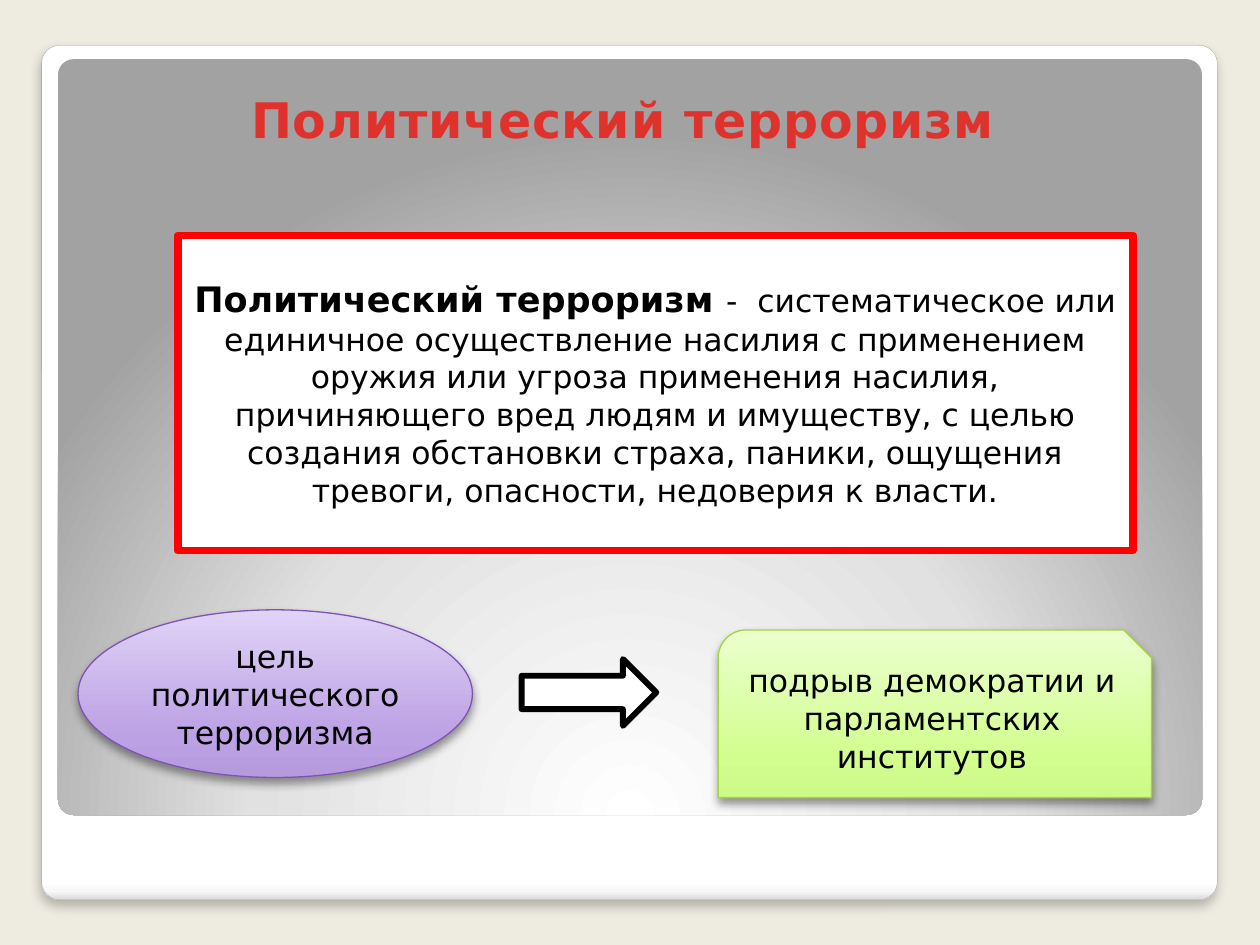
from lxml.etree import SubElement
from pptx import Presentation
from pptx.dml.color import RGBColor
from pptx.enum.shapes import MSO_SHAPE as Shape
from pptx.enum.text import MSO_ANCHOR as Anchor, MSO_AUTO_SIZE as AutoSize, PP_ALIGN as Align
from pptx.oxml.ns import qn
from pptx.util import Pt

FONT = "DejaVu Sans"
COLORS = {
    "background": "EEECE1", "white": "FFFFFF", "black": "000000",
    "title": "E0322D", "border": "FF0000", "frame": "A4A4A4",
    "purple": "7E54B2", "green": "A4D340",
}
GRADIENTS = {
    "frame": [(0, "FFFFFF"), (98, "FFFFFF"), (99, "F7F7F7"), (100, "DADADA")],
    "panel": [(0, "FFFFFF"), (55, "E1E1E1"), (100, "A2A2A2")],
    "purple": [(0, "B59ADE"), (25, "BCA1E4"), (100, "E0D3F6")],
    "green": [(0, "CDF989"), (25, "D2FE90"), (100, "EBFFCE")],
}
SOFT_SHADOW = {"opacity": 40, "blur": 5.2, "distance": 3}


def color(name):
    return RGBColor.from_string(COLORS[name])


def add_element(parent, tag, **attributes):
    values = {key: str(value) for key, value in attributes.items()}
    return SubElement(parent, qn(tag), values)


def set_gradient(shape, stops, angle=None):
    """Fill with a linear gradient, or a circular one from the bottom if no angle is given."""
    shape.fill.gradient()
    gradient = shape._element.spPr.find(qn("a:gradFill"))
    for child in list(gradient):
        gradient.remove(child)
    stop_list = add_element(gradient, "a:gsLst")
    for position, value in stops:
        stop = add_element(stop_list, "a:gs", pos=position * 1000)
        add_element(stop, "a:srgbClr", val=value)
    if angle is None:
        circle = add_element(gradient, "a:path", path="circle")
        add_element(circle, "a:fillToRect", l=50000, t=175000, r=50000, b=-75000)
    else:
        add_element(gradient, "a:lin", ang=angle * 60000, scaled=0)


def set_shadow(shape, opacity, blur, distance):
    effects = shape._element.spPr.find(qn("a:effectLst"))
    shadow = add_element(effects, "a:outerShdw", blurRad=Pt(blur), dist=Pt(distance),
                         dir=90 * 60000, algn="t", rotWithShape=0)
    tint = add_element(shadow, "a:srgbClr", val=COLORS["black"])
    add_element(tint, "a:alpha", val=opacity * 1000)


def add_figure(page, kind, bounds, gradient=None, angle=None, line=None, width=0.75,
               shadow=None, corner=None):
    shape = page.shapes.add_shape(kind, *map(Pt, bounds))
    shape.shadow.inherit = False
    if corner is not None:
        shape.adjustments[0] = corner
    if gradient:
        set_gradient(shape, GRADIENTS[gradient], angle)
    else:
        shape.fill.solid()
        shape.fill.fore_color.rgb = color("white")
    if line:
        shape.line.color.rgb = color(line)
        shape.line.width = Pt(width)
    else:
        shape.line.fill.background()
    if shadow:
        set_shadow(shape, **shadow)
    return shape


def add_text(shape, text, size=18, bold=False, tint="black", anchor=Anchor.MIDDLE, spacing=None):
    """Append a centred span to the first paragraph of the shape."""
    frame = shape.text_frame
    frame.word_wrap = True
    frame.auto_size = AutoSize.NONE
    frame.vertical_anchor = anchor
    para = frame.paragraphs[0]
    para.alignment = Align.CENTER
    span = para.add_run()
    span.text = text
    span.font.name = FONT
    span.font.size = Pt(size)
    span.font.bold = bold
    span.font.color.rgb = color(tint)
    if spacing:
        span.font._element.set("spc", str(round(spacing * 100)))


def add_backdrop(page):
    page.background.fill.solid()
    page.background.fill.fore_color.rgb = color("background")
    add_figure(page, Shape.ROUNDED_RECTANGLE, (23.8, 25.9, 671.8, 488.2), "frame", 90,
               line="frame", width=0.16, corner=0.021,
               shadow={"opacity": 25, "blur": 6, "distance": 4})
    add_figure(page, Shape.ROUNDED_RECTANGLE, (33.1, 33.8, 653.8, 432), "panel", corner=0.021)


def add_title(page, text):
    title = page.shapes.title
    title.left, title.top, title.width, title.height = map(Pt, (33.8, 44.6, 644.4, 43.9))
    page.shapes._spTree.append(title._element)  # in front of the backdrop
    add_text(title, text, size=28, bold=True, tint="title", anchor=Anchor.BOTTOM, spacing=0.5)


def add_definition(page, term, meaning):
    box = add_figure(page, Shape.FLOWCHART_PROCESS, (101.5, 134.6, 545.8, 180),
                     line="border", width=4.5)
    add_text(box, term, size=20, bold=True)
    add_text(box, meaning)


def add_card(page, kind, bounds, hue, text):
    card = add_figure(page, kind, bounds, hue, 270, line=hue, shadow=SOFT_SHADOW)
    add_text(card, text)


def main():
    deck = Presentation()
    deck.slide_width, deck.slide_height = Pt(720), Pt(540)
    page = deck.slides.add_slide(deck.slide_layouts[5])
    add_backdrop(page)
    add_title(page, "Политический терроризм")
    add_definition(
        page, "Политический терроризм ",
        "-  систематическое или единичное осуществление насилия с применением оружия "
        "или угроза применения насилия, причиняющего вред людям и имуществу, с целью "
        "создания обстановки страха, паники, ощущения тревоги, опасности, недоверия к власти.")
    add_card(page, Shape.OVAL, (44.6, 348.5, 225.4, 95.8), "purple",
             "цель политического терроризма")
    add_figure(page, Shape.RIGHT_ARROW, (298.1, 376.6, 77, 38.2), line="black", width=3.35)
    add_card(page, Shape.SNIP_ROUND_RECTANGLE, (410.4, 360, 247.7, 95.8), "green",
             "подрыв демократии и парламентских институтов")
    deck.save("out.pptx")


if __name__ == "__main__":
    main()
